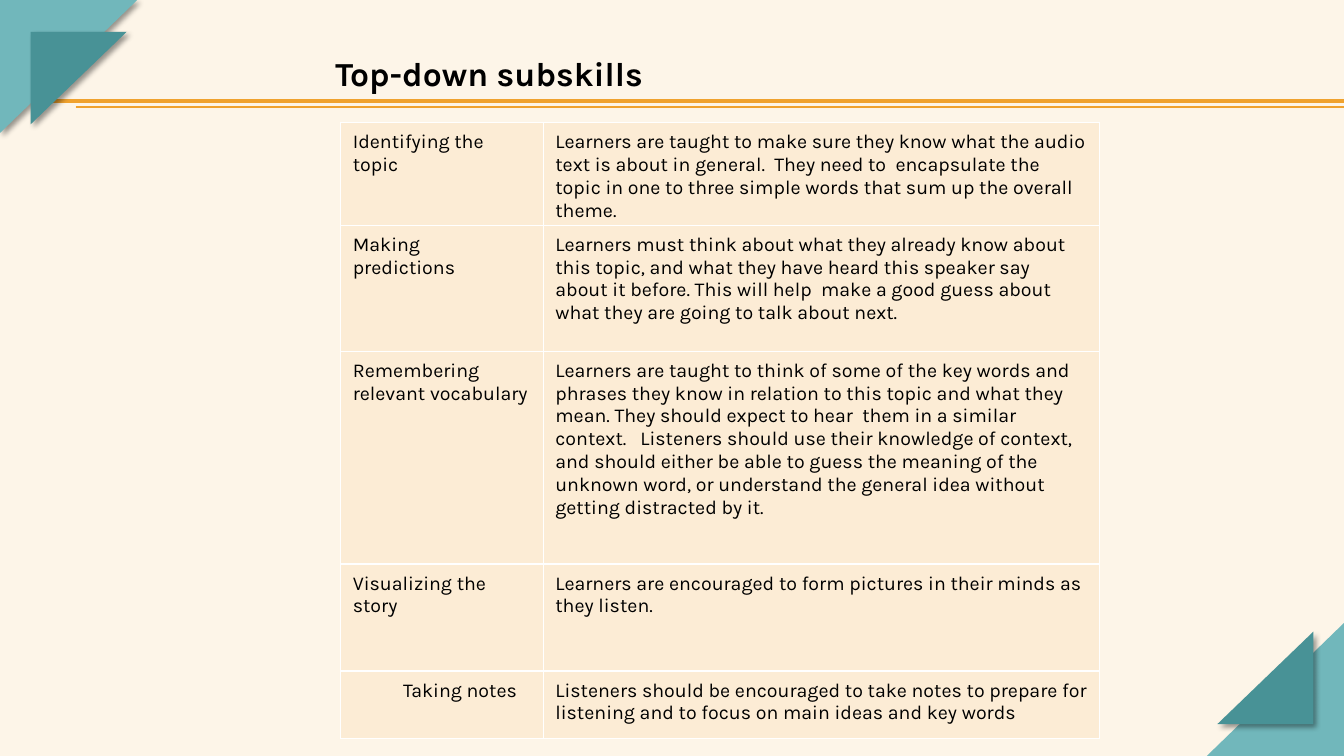
from dataclasses import dataclass

from lxml.etree import SubElement
from pptx import Presentation
from pptx.dml.color import RGBColor
from pptx.enum.shapes import MSO_CONNECTOR, MSO_SHAPE
from pptx.oxml import parse_xml
from pptx.oxml.ns import nsdecls, qn
from pptx.util import Pt


@dataclass(frozen=True)
class Theme:
    font: str = "Karla"
    back: str = "FDF5E8"
    rule: str = "F0A22E"
    light: str = "71B7BB"
    dark: str = "489296"
    cell: str = "FCECD5"
    edge: str = "FFFFFF"
    ink: str = "000000"
    title: int = 24
    body: int = 14


THEME = Theme()
WIDE, HIGH = 960, 540
TITLE = "Top-down subskills"
COLS = (144.7, 397.4)
SKILLS = (
    (72.5, "Identifying the topic",
     "Learners are taught to make sure they know what the audio text is about in "
     "general.  They need to  encapsulate the topic in one to three simple words "
     "that sum up the overall theme."),
    (90, "Making  predictions",
     "Learners must think about what they already know about this topic, and what "
     "they have heard this speaker say about it before. This will help  make a good "
     "guess about what they are going to talk about next."),
    (152, "Remembering relevant vocabulary",
     "Learners are taught to think of some of the key words and phrases they know "
     "in relation to this topic and what they mean. They should expect to hear  them "
     "in a similar context.   Listeners should use their knowledge of context,  and "
     "should either be able to guess the meaning of the unknown word, or understand "
     "the general idea without getting distracted by it."),
    (76.5, "Visualizing the story",
     "Learners are encouraged to form pictures in their minds as they listen."),
    (48, "Taking notes",
     "Listeners should be encouraged to take notes to prepare for listening and to "
     "focus on main ideas and key words"),
)


def color(code):
    return RGBColor.from_string(code)


def style(frame, size, bold=False):
    for para in frame.paragraphs:
        for run in para.runs:
            run.font.name = THEME.font
            run.font.size = Pt(size)
            run.font.bold = bold
            run.font.color.rgb = color(THEME.ink)


def shade(shape):
    shape._element.spPr.append(parse_xml(
        f'<a:effectLst {nsdecls("a")}>'
        f'<a:outerShdw blurRad="{Pt(4)}" dist="{Pt(3)}" dir="2700000" '
        'algn="tl" rotWithShape="0"><a:srgbClr val="000000">'
        '<a:alpha val="40000"/></a:srgbClr></a:outerShdw></a:effectLst>'))


def corner(slide, box, turn):
    left, top, width, height = box
    sign = 1 if turn == 90 else -1
    mid_x, mid_y = left + width / 2, top + height / 2
    parts = ((0, 0, height, width, THEME.light),
             (7.2, 8.3, 66, 68.5, THEME.dark))
    for shift_x, shift_y, wide, high, fill in parts:
        shape = slide.shapes.add_shape(
            MSO_SHAPE.RIGHT_TRIANGLE,
            Pt(mid_x + sign * shift_x - wide / 2),
            Pt(mid_y + sign * shift_y - high / 2), Pt(wide), Pt(high))
        shape.rotation = turn
        shape.fill.solid()
        shape.fill.fore_color.rgb = color(fill)
        shape.line.fill.background()
        shade(shape)


def rules(slide, box):
    left, top, width, height = box
    for start, drop, weight in ((54, height, 0.75), (54, height - 0.7, 0.75), (0, 0, 3)):
        line = slide.shapes.add_connector(
            MSO_CONNECTOR.STRAIGHT, Pt(left + start), Pt(top + drop),
            Pt(left + width), Pt(top + drop))
        line.line.color.rgb = color(THEME.rule)
        line.line.width = Pt(weight)
        SubElement(line._element.spPr, qn("a:effectLst"))


def heading(slide, box):
    frame = slide.shapes.add_textbox(*map(Pt, box)).text_frame
    frame.word_wrap = True
    frame.text = TITLE
    style(frame, THEME.title, True)


def border(cell):
    props = cell._tc.get_or_add_tcPr()
    for spot, side in enumerate(("lnL", "lnR", "lnT", "lnB")):
        props.insert(spot, parse_xml(
            f'<a:{side} {nsdecls("a")} w="{Pt(1)}"><a:solidFill>'
            f'<a:srgbClr val="{THEME.edge}"/></a:solidFill></a:{side}>'))


def write(cell, text):
    cell.margin_left = cell.margin_right = Pt(8.6)
    cell.margin_top, cell.margin_bottom = Pt(5.8), Pt(0)
    cell.fill.solid()
    cell.fill.fore_color.rgb = color(THEME.cell)
    border(cell)
    cell.text_frame.text = text
    style(cell.text_frame, THEME.body)


def skills(slide, box):
    table = slide.shapes.add_table(len(SKILLS), len(COLS), *map(Pt, box)).table
    table.first_row = table.horz_banding = False
    for col, width in zip(table.columns, COLS):
        col.width = Pt(width)
    for row, (height, *texts) in zip(table.rows, SKILLS):
        row.height = Pt(height)
        for cell, text in zip(row.cells, texts):
            write(cell, text)
    last = table.cell(len(SKILLS) - 1, 0).text_frame.paragraphs[0]
    last._p.get_or_add_pPr().set("marL", str(Pt(36)))


def main():
    deck = Presentation()
    deck.slide_width, deck.slide_height = Pt(WIDE), Pt(HIGH)
    slide = deck.slides.add_slide(deck.slide_layouts[6])
    slide.background.fill.solid()
    slide.background.fill.fore_color.rgb = color(THEME.back)
    rules(slide, (0, 72, WIDE, 5))
    wide, high = 98, 95
    corner(slide, (0, 0, wide, high), 90)
    corner(slide, (WIDE - wide, HIGH - high, wide, high), 270)
    heading(slide, (232.5, 34.5, 576, 36))
    skills(slide, (243.4, 87.8, sum(COLS), sum(row[0] for row in SKILLS)))
    deck.save("out.pptx")


if __name__ == "__main__":
    main()
